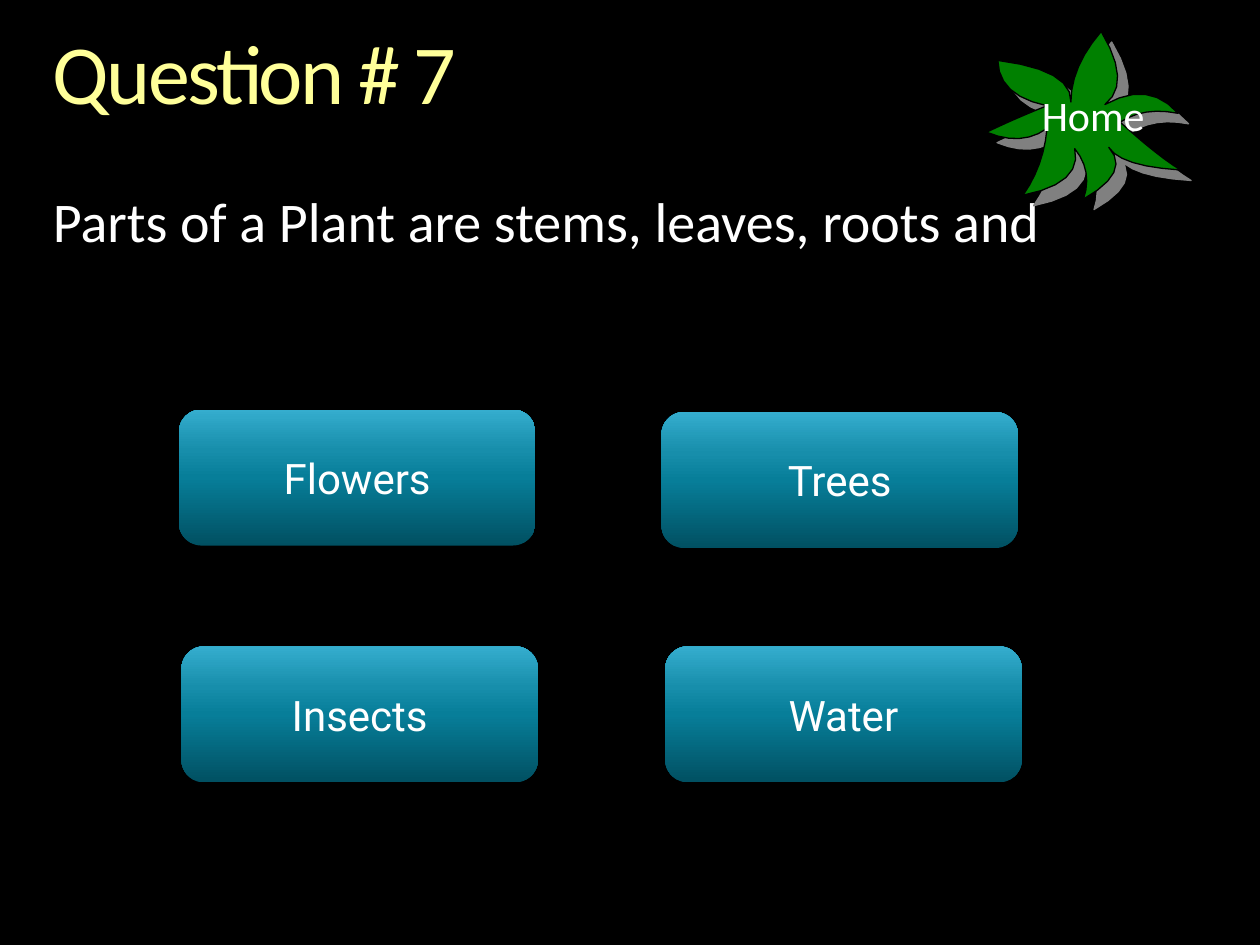
"""Builds a quiz slide with four answer buttons and a leafy home marker."""
from dataclasses import dataclass

from lxml import etree
from pptx import Presentation
from pptx.dml.color import RGBColor
from pptx.enum.shapes import MSO_SHAPE
from pptx.enum.text import MSO_ANCHOR, MSO_AUTO_SIZE, PP_ALIGN
from pptx.oxml.ns import qn
from pptx.util import Inches, Pt

ROUNDED = MSO_SHAPE.ROUNDED_RECTANGLE
TOP, MIDDLE = MSO_ANCHOR.TOP, MSO_ANCHOR.MIDDLE
GROW = MSO_AUTO_SIZE.SHAPE_TO_FIT_TEXT
LEFT, CENTER = PP_ALIGN.LEFT, PP_ALIGN.CENTER


@dataclass(frozen=True)
class Theme:
    background: str = "000000"
    title: str = "FFFF99"
    text: str = "FFFFFF"
    leaf: str = "008000"
    leaf_line: str = "000000"
    leaf_shadow: str = "808080"
    button_shadow: str = "000000"
    button_stops: tuple = ((0, "015062"), (50, "077E99"), (70, "178EAB"), (100, "35ADCE"))
    font: str = "Calibri"
    button_font: str = "Roboto"
    title_size: int = 48
    question_size: int = 32
    label_size: int = 24


THEME = Theme()


def style_text(shape, text, size, color, font, align=LEFT):
    shape.text_frame.text = text
    paragraph = shape.text_frame.paragraphs[0]
    paragraph.alignment = align
    run = paragraph.runs[0]
    run.font.size = Pt(size)
    run.font.name = font
    run.font.color.rgb = RGBColor.from_string(color)
    return paragraph


def add_shadow(shape, color, alpha, blur, distance, angle):
    shape.shadow.inherit = False
    effects = shape._element.spPr.find(qn("a:effectLst"))
    shadow = etree.SubElement(
        effects, qn("a:outerShdw"), blurRad=str(Pt(blur)), dist=str(Pt(distance)),
        dir=str(angle * 60000), algn="ctr", rotWithShape="0")
    shade = etree.SubElement(shadow, qn("a:srgbClr"), val=color)
    etree.SubElement(shade, qn("a:alpha"), val=str(alpha * 1000))


prs = Presentation()
prs.slide_width, prs.slide_height = Inches(10), Inches(7.5)
slide = prs.slides.add_slide(prs.slide_layouts[1])
slide.background.fill.solid()
slide.background.fill.fore_color.rgb = RGBColor.from_string(THEME.background)

heading, question = slide.shapes.title, slide.placeholders[1]
for holder, text, top, height, size, color in (
    (heading, "Question # 7", 0.25, 0.73, THEME.title_size, THEME.title),
    (question, "Parts of a Plant are stems, leaves, roots and", 1.54, 0.48,
     THEME.question_size, THEME.text),
):
    holder.left, holder.top = Inches(0.42), Inches(top)
    holder.width, holder.height = Inches(9.17), Inches(height)
    frame = holder.text_frame
    frame.margin_left = frame.margin_right = frame.margin_top = frame.margin_bottom = 0
    frame.word_wrap = True
    frame.auto_size = GROW
    frame.vertical_anchor = TOP
    paragraph = style_text(holder, text, size, color, THEME.font)
    paragraph.line_spacing = 0.9
    paragraph.space_before = Pt(0)
    properties = paragraph._p.get_or_add_pPr()
    properties.set("marL", "0")
    properties.set("indent", "0")
    etree.SubElement(properties, qn("a:buNone"))
heading.text_frame.paragraphs[0].runs[0].font._element.set("spc", "-150")

for answer, left, top in (
    ("Flowers", 1.42, 3.25),
    ("Insects", 1.44, 5.13),
    ("Water", 5.28, 5.13),
    ("Trees", 5.25, 3.27),
):
    button = slide.shapes.add_shape(ROUNDED, Inches(left), Inches(top), Inches(2.83), Inches(1.08))
    button.fill.gradient()
    button.fill.gradient_angle = 90
    stops = button._element.spPr.find(qn("a:gradFill")).find(qn("a:gsLst"))
    stops.clear()
    for position, color in THEME.button_stops:
        stop = etree.SubElement(stops, qn("a:gs"), pos=str(position * 1000))
        etree.SubElement(stop, qn("a:srgbClr"), val=color)
    button.line.fill.background()
    add_shadow(button, THEME.button_shadow, 45, 5, 3, 90)
    button.text_frame.vertical_anchor = MIDDLE
    style_text(button, answer, THEME.label_size, THEME.text, THEME.button_font, CENTER)

leaf_bends = (
    (8.50, 0.81), (8.36, 0.60), (7.92, 0.48), (8.02, 0.71),
    (8.31, 0.84), (8.07, 0.94), (7.83, 1.05), (8.09, 1.10),
    (8.31, 1.02), (8.25, 1.30), (8.12, 1.55), (8.46, 1.41),
    (8.53, 1.18), (8.62, 1.37), (8.60, 1.58), (8.84, 1.37),
    (8.80, 1.17), (8.99, 1.29), (9.37, 1.35), (9.16, 1.20),
    (8.89, 0.97), (9.10, 0.89), (9.35, 0.90), (9.09, 0.75),
    (8.77, 0.83), (8.87, 0.60), (8.74, 0.25), (8.56, 0.53),
)
curve_steps = 6
leaf_outline = []
for index in range(0, len(leaf_bends), 2):
    start, middle = leaf_bends[index:index + 2]
    end = leaf_bends[(index + 2) % len(leaf_bends)]
    for step in range(curve_steps):
        t = step / curve_steps
        leaf_outline.append(tuple(
            Inches(a * (1 - t) * (1 - 2 * t) + 4 * b * t * (1 - t) + c * t * (2 * t - 1))
            for a, b, c in zip(start, middle, end)))
builder = slide.shapes.build_freeform(*leaf_outline[0])
builder.add_line_segments(leaf_outline[1:], close=True)
leaf = builder.convert_to_shape()
leaf.fill.solid()
leaf.fill.fore_color.rgb = RGBColor.from_string(THEME.leaf)
leaf.line.color.rgb = RGBColor.from_string(THEME.leaf_line)
leaf.line.width = Pt(0.75)
add_shadow(leaf, THEME.leaf_shadow, 100, 0, 8.5, 45)

home = slide.shapes.add_textbox(Inches(8.17), Inches(0.66), Inches(1.08), Inches(0.5))
home.text_frame.word_wrap = True
home.text_frame.auto_size = GROW
style_text(home, "Home", THEME.label_size, THEME.text, THEME.font)

prs.save("out.pptx")
